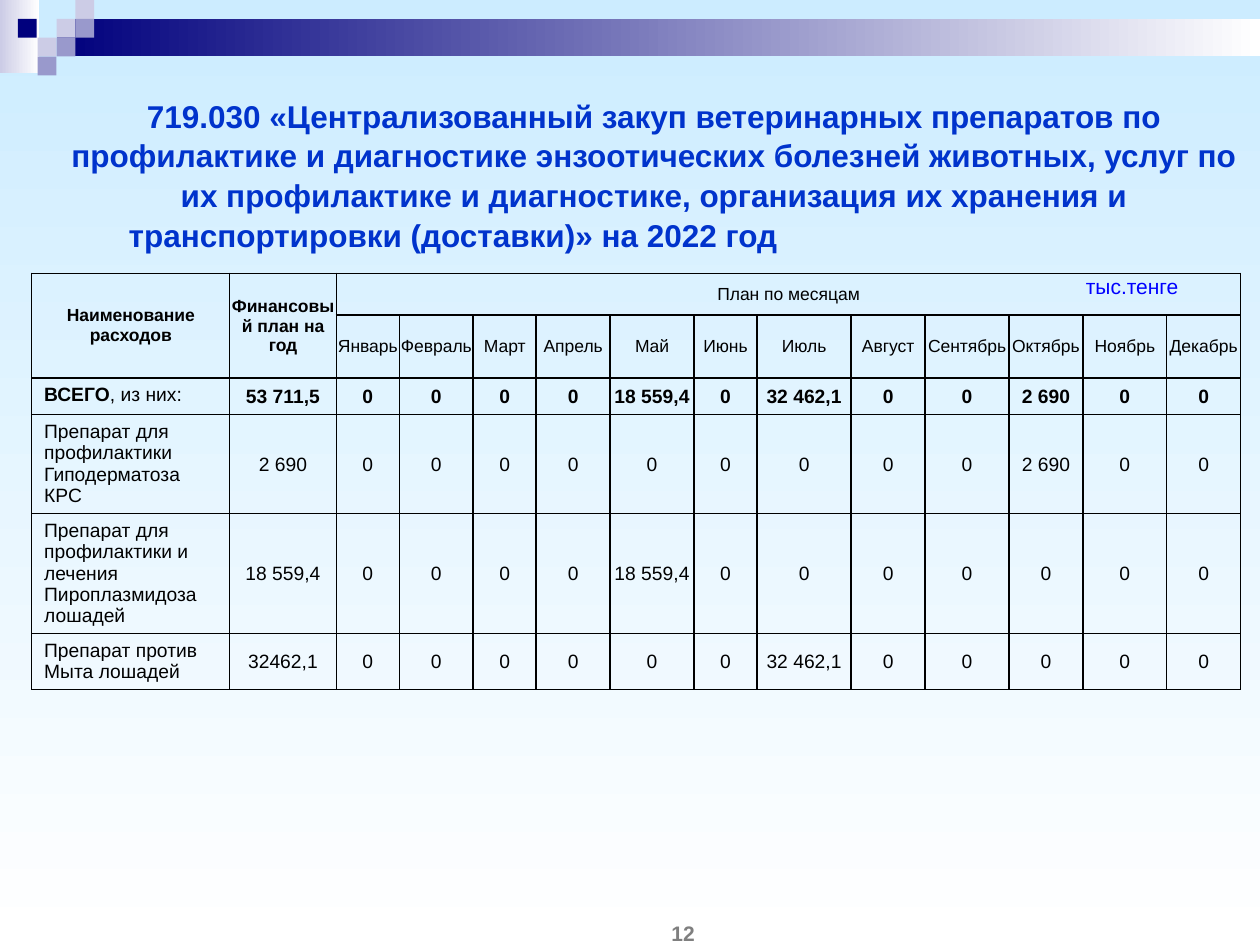
from lxml.etree import SubElement
from pptx import Presentation
from pptx.dml.color import RGBColor
from pptx.enum.shapes import MSO_SHAPE as Shape
from pptx.enum.text import MSO_ANCHOR as Anchor, MSO_AUTO_SIZE as AutoSize, PP_ALIGN as Align
from pptx.oxml.ns import qn
from pptx.util import Cm, Pt

NAVY = RGBColor(0x00, 0x00, 0x7D)
LILAC = RGBColor(0xCC, 0xCC, 0xE6)
VIOLET = RGBColor(0x99, 0x99, 0xCC)
SKY = RGBColor(0xCC, 0xEC, 0xFF)
WHITE = RGBColor(0xFF, 0xFF, 0xFF)
BLACK = RGBColor(0x00, 0x00, 0x00)
TITLE_BLUE = RGBColor(0x00, 0x33, 0xCC)
UNIT_BLUE = RGBColor(0x00, 0x00, 0xFF)
GRAY = RGBColor(0x7F, 0x7F, 0x7F)

TITLE = [
    "719.030 «Централизованный закуп ветеринарных препаратов по профилактике и "
    "диагностике энзоотических болезней животных, услуг по их профилактике и "
    "диагностике, организация их хранения и",
    "транспортировки (доставки)» на 2022 год",
]
MONTHS = ["Январь", "Февраль", "Март", "Апрель", "Май", "Июнь", "Июль",
          "Август", "Сентябрь", "Октябрь", "Ноябрь", "Декабрь"]
EXPENSES = [
    ("ВСЕГО", "53 711,5", {"Май": "18 559,4", "Июль": "32 462,1", "Октябрь": "2 690"}),
    ("Препарат для профилактики Гиподерматоза КРС", "2 690", {"Октябрь": "2 690"}),
    ("Препарат для профилактики и лечения Пироплазмидоза лошадей", "18 559,4",
     {"Май": "18 559,4"}),
    ("Препарат против Мыта лошадей", "32462,1", {"Июль": "32 462,1"}),
]
COLUMN_WIDTHS = [3.99, 2.15, 1.27, 1.49, 1.27, 1.49, 1.69, 1.27, 1.9,
                 1.49, 1.69, 1.49, 1.69, 1.49]
ROW_HEIGHTS = [0.84, 1.27] + [0.74] * len(EXPENSES)


def format_runs(paragraph, size, color, bold=False):
    for run in paragraph.runs:
        run.font.name = "Arial"
        run.font.size = Pt(size)
        run.font.bold = bold
        run.font.color.rgb = color


def fade(fill, start, end, angle):
    fill.gradient()
    fill.gradient_angle = angle
    for stop, color in zip(fill.gradient_stops, (start, end)):
        stop.color.rgb = color


def add_banner(slide, left, top, width):
    banner = slide.shapes.add_group_shape()
    slide.shapes.title.element.addprevious(banner.element)
    tile = 0.38

    def add_block(x, y, w, h):
        block = banner.shapes.add_shape(
            Shape.RECTANGLE, Cm(left + x), Cm(top + y), Cm(w), Cm(h))
        block.shadow.inherit = False
        block.line.fill.background()
        return block

    fade(add_block(0, 0, 0.79, 1.47).fill, LILAC, WHITE, 0)
    fade(add_block(3 * tile, tile, width - 3 * tile, 2 * tile).fill, NAVY, WHITE, 0)
    mosaic = [(3, 1, LILAC), (4, 0, LILAC), (4, 1, VIOLET), (2, 2, LILAC),
              (0.95, 1, NAVY), (3, 2, VIOLET), (2, 3, VIOLET)]
    for column, row, color in mosaic:
        square = add_block(column * tile, row * tile, tile, tile)
        square.fill.solid()
        square.fill.fore_color.rgb = color


def add_title(slide, left, top, width, height):
    title = slide.shapes.title
    title.left, title.top, title.width, title.height = map(Cm, (left, top, width, height))
    frame = title.text_frame
    frame.text = "\n".join(TITLE)
    frame.word_wrap = True
    frame.auto_size = AutoSize.NONE
    frame.vertical_anchor = Anchor.MIDDLE
    for paragraph, align in zip(frame.paragraphs, (Align.CENTER, Align.LEFT)):
        paragraph.alignment = align
        paragraph.line_spacing = 1.05
        paragraph.space_before = Pt(0)
        format_runs(paragraph, 18, TITLE_BLUE, True)
    last_line = frame.paragraphs[-1]
    last_line._p.get_or_add_pPr().set("marL", str(Cm(1.37)))


def style_cell(cell, margins):
    cell.margin_left, cell.margin_top, cell.margin_right, cell.margin_bottom = map(Cm, margins)
    cell.fill.background()
    properties = cell._tc.get_or_add_tcPr()
    for position, side in enumerate(("lnL", "lnR", "lnT", "lnB")):
        border = SubElement(properties, qn(f"a:{side}"), w=str(Pt(1)))
        paint = SubElement(border, qn("a:solidFill"))
        SubElement(paint, qn("a:srgbClr"), val=str(BLACK))
        properties.insert(position, border)


def fill_cell(cell, text, size, bold, align=Align.CENTER, anchor=Anchor.MIDDLE):
    cell.text_frame.text = text
    cell.vertical_anchor = anchor
    paragraph = cell.text_frame.paragraphs[0]
    paragraph.alignment = align
    format_runs(paragraph, size, BLACK, bold)
    return paragraph


def add_plan(slide, left, top, height):
    plan_frame = slide.shapes.add_table(
        len(ROW_HEIGHTS), len(COLUMN_WIDTHS),
        Cm(left), Cm(top), Cm(sum(COLUMN_WIDTHS)), Cm(height))
    plan = plan_frame.table
    plan.first_row = plan.horz_banding = False
    for column, width in zip(plan.columns, COLUMN_WIDTHS):
        column.width = Cm(width)
    for row, row_height in zip(plan.rows, ROW_HEIGHTS):
        row.height = Cm(row_height)
        for index, cell in enumerate(row.cells):
            style_cell(cell, (0.02, 0.02, 0.02, 0) if index else (0.25, 0.13, 0.25, 0.13))
    plan_frame.height = Cm(height)

    plan.cell(0, 0).merge(plan.cell(1, 0))
    plan.cell(0, 1).merge(plan.cell(1, 1))
    plan.cell(0, 2).merge(plan.cell(0, len(COLUMN_WIDTHS) - 1))
    fill_cell(plan.cell(0, 0), "Наименование расходов", 10, True)
    fill_cell(plan.cell(0, 1), "Финансовый план на год", 10, True)
    fill_cell(plan.cell(0, 2), "План по месяцам", 10, False)
    for column, month in enumerate(MONTHS, 2):
        fill_cell(plan.cell(1, column), month, 10, False)

    for row, (expense, year_plan, payments) in enumerate(EXPENSES, 2):
        is_total = row == 2
        name = fill_cell(plan.cell(row, 0), expense, 11, is_total, Align.LEFT, Anchor.TOP)
        if is_total:
            format_runs(name, 11, BLACK, True)
            suffix = name.add_run()
            suffix.text = ", из них:"
            suffix.font.name = "Arial"
            suffix.font.size = Pt(11)
            suffix.font.bold = False
            suffix.font.color.rgb = BLACK
        amounts = [year_plan] + [payments.get(month, "0") for month in MONTHS]
        for column, amount in enumerate(amounts, 1):
            fill_cell(plan.cell(row, column), amount, 11, is_total)


def add_label(slide, text, box, color, bold=False, anchor=Anchor.TOP):
    frame = slide.shapes.add_textbox(*map(Cm, box)).text_frame
    frame.text = text
    frame.word_wrap = True
    frame.vertical_anchor = anchor
    frame.margin_left = frame.margin_right = frame.margin_top = frame.margin_bottom = 0
    frame.paragraphs[0].alignment = Align.CENTER
    format_runs(frame.paragraphs[0], 12, color, bold)


def main():
    deck = Presentation()
    deck.slide_width, deck.slide_height = Cm(25.4), Cm(19.05)
    slide = deck.slides.add_slide(deck.slide_layouts[5])
    fade(slide.background.fill, SKY, WHITE, 270)
    add_banner(slide, 0, 0, 25.4)
    add_title(slide, 0.97, 3.18, 24.43, 0.66)
    add_plan(slide, 0.64, 5.51, 8.74)
    add_label(slide, "тыс.тенге", (20.73, 5.51, 4.19, 0.51), UNIT_BLUE)
    add_label(slide, "12", (11.23, 18.59, 5.08, 0.46), GRAY, True, Anchor.MIDDLE)
    deck.save("out.pptx")


if __name__ == "__main__":
    main()
